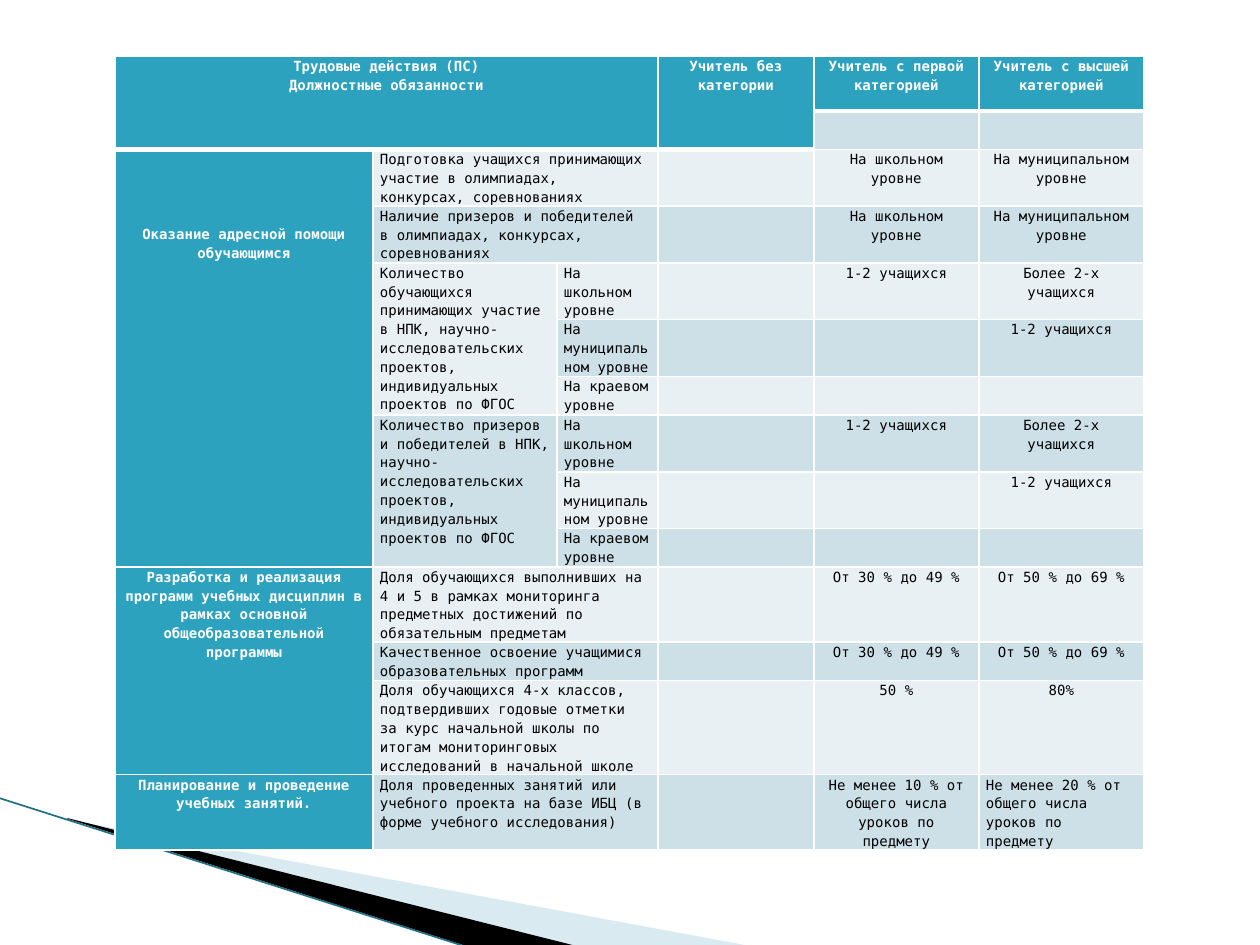
from collections import namedtuple

from lxml import etree
from pptx import Presentation
from pptx.dml.color import RGBColor
from pptx.enum.shapes import MSO_CONNECTOR as Connector
from pptx.enum.text import PP_ALIGN as Align
from pptx.oxml.ns import qn
from pptx.util import Pt

PX = 914400 / 126
Theme = namedtuple("Theme", "font size line_spacing teal light dark white black pale edge")
theme = Theme("DejaVu Sans Mono", Pt(8), 1.15, "2DA2BF", "E8F0F4", "CDE0E8",
              "FFFFFF", "000000", "A0CBDC", "1F7085")


def px(value):
    return round(value * PX)


def set_border(cell, side, points):
    line = etree.SubElement(cell._tc.get_or_add_tcPr(), qn(f"a:ln{side}"), w=str(Pt(points)))
    fill = etree.SubElement(line, qn("a:solidFill"))
    etree.SubElement(fill, qn("a:srgbClr"), val=theme.white)


presentation = Presentation()
presentation.slide_width, presentation.slide_height = px(1260), px(945)
slide = presentation.slides.add_slide(presentation.slide_layouts[6])

# Corner wedges
wedges = [
    (theme.pale, 40, [(69, 820), (750, 946), (575, 946), (69, 819)]),
    (theme.black, 100, [(67, 818), (576, 946), (469, 947), (68, 819)]),
]
for color, opacity, points in wedges:
    builder = slide.shapes.build_freeform(*points[0], scale=PX)
    builder.add_line_segments(points[1:], close=True)
    wedge = builder.convert_to_shape()
    wedge.shadow.inherit = False
    wedge.line.fill.background()
    wedge.fill.solid()
    wedge.fill.fore_color.rgb = RGBColor.from_string(color)
    color_element = wedge._element.spPr.find(".//" + qn("a:srgbClr"))
    etree.SubElement(color_element, qn("a:alpha"), val=str(opacity * 1000))

# Edge line
edge = slide.shapes.add_connector(Connector.STRAIGHT, px(-1), px(798), px(467), px(947))
edge.line.color.rgb = RGBColor.from_string(theme.edge)
edge.line.width = Pt(0.95)
etree.SubElement(edge._element.spPr, qn("a:effectLst"))

# Table grid
column_widths = [258, 184, 101, 156, 165, 165]
row_heights = [55, 38, 56, 57, 56, 57, 37, 57, 56, 38, 75, 38, 94, 75]
table = slide.shapes.add_table(
    len(row_heights), len(column_widths), px(115), px(56),
    px(sum(column_widths)), px(sum(row_heights))).table
table.first_row = table.horz_banding = False
for column, width in zip(table.columns, column_widths):
    column.width = px(width)
for row, height in zip(table.rows, row_heights):
    row.height = px(height)

# Wording by (row, column)
projects = "НПК, научно-исследовательских проектов, индивидуальных проектов по ФГОС"
texts = {
    (0, 0): "Трудовые действия (ПС)\nДолжностные обязанности",
    (0, 3): "Учитель без категории",
    (0, 4): "Учитель с первой категорией",
    (0, 5): "Учитель с высшей категорией",
    (2, 0): "Оказание адресной помощи обучающимся",
    (2, 1): "Подготовка учащихся принимающих участие в олимпиадах, конкурсах, соревнованиях",
    (3, 1): "Наличие призеров и победителей в олимпиадах, конкурсах, соревнованиях",
    (4, 1): f"Количество обучающихся принимающих участие в {projects}",
    (7, 1): f"Количество призеров и победителей в {projects}",
    (10, 0): "Разработка и реализация программ учебных дисциплин в рамках основной "
             "общеобразовательной программы",
    (10, 1): "Доля обучающихся выполнивших на 4 и 5 в рамках мониторинга предметных "
             "достижений по обязательным предметам",
    (11, 1): "Качественное освоение учащимися образовательных программ",
    (12, 1): "Доля обучающихся 4-х классов, подтвердивших годовые отметки за курс начальной "
             "школы по итогам мониторинговых исследований в начальной школе",
    (12, 4): "50 %",
    (12, 5): "80%",
    (13, 0): "Планирование и проведение учебных занятий.",
    (13, 1): "Доля проведенных занятий или учебного проекта на базе ИБЦ "
             "(в форме учебного исследования)",
    (13, 4): "Не менее 10 % от общего числа уроков по предмету",
    (13, 5): "Не менее 20 % от общего числа уроков по предмету",
}
for row in (2, 3):
    texts[row, 4] = "На школьном уровне"
    texts[row, 5] = "На муниципальном уровне"
for row in (4, 7):
    for offset, level in enumerate(("школьном", "муниципальном", "краевом")):
        texts[row + offset, 2] = f"На {level} уровне"
    texts[row, 4] = texts[row + 1, 5] = "1-2 учащихся"
    texts[row, 5] = "Более 2-х учащихся"
for row in (10, 11):
    texts[row, 4] = "От 30 % до 49 %"
    texts[row, 5] = "От 50 % до 69 %"

# Merged cells: first and last corner
merges = [((0, 0), (1, 2)), ((0, 3), (1, 3)), ((2, 0), (9, 0)), ((10, 0), (12, 0)),
          ((4, 1), (6, 1)), ((7, 1), (9, 1))]
merges += [((row, 1), (row, 2)) for row in (2, 3, 10, 11, 12, 13)]
for first, last in merges:
    table.cell(*first).merge(table.cell(*last))

# Cell text, borders and fills
for row in range(len(row_heights)):
    for column in range(len(column_widths)):
        cell = table.cell(row, column)
        heading = row == 0 or column == 0 or (row == 1 and column < 4)
        header_end = 1 if column < 4 else 0
        cell.margin_left = cell.margin_right = px(7)
        cell.margin_top = px(75) if (row, column) == (2, 0) else 0
        cell.margin_bottom = 0
        for side in "LR":
            set_border(cell, side, 1)
        set_border(cell, "T", 3 if row == header_end + 1 else 1)
        set_border(cell, "B", 3 if row == header_end or (row == 0 and column < 4) else 1)
        cell.fill.solid()
        band = theme.dark if row % 2 else theme.light
        cell.fill.fore_color.rgb = RGBColor.from_string(theme.teal if heading else band)
        if (row, column) not in texts:
            continue
        cell.text = texts[row, column]
        centered = (heading or column > 3) and (row, column) != (13, 5)
        for paragraph in cell.text_frame.paragraphs:
            paragraph.alignment = Align.CENTER if centered else Align.LEFT
            paragraph.line_spacing = theme.line_spacing
            paragraph.font.name = theme.font
            paragraph.font.size = theme.size
            paragraph.font.bold = heading
            paragraph.font.color.rgb = RGBColor.from_string(
                theme.white if heading else theme.black)

presentation.save("out.pptx")
